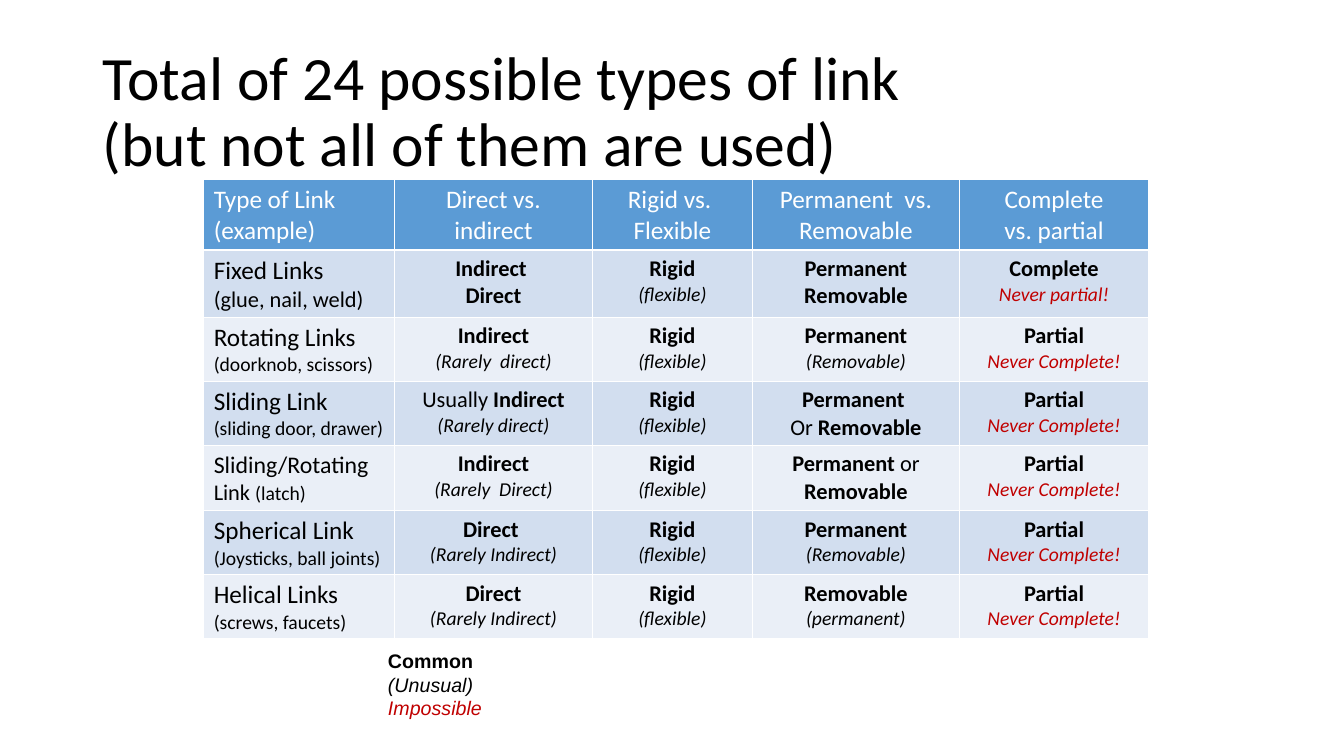
import pptx
import pptx.dml.color
import pptx.enum.text
import pptx.util

Inches = pptx.util.Inches
ALIGN = pptx.enum.text.PP_ALIGN

COLORS = {
    "black": "000000",
    "white": "FFFFFF",
    "impossible": "C00000",
    "header": "5B9BD5",
    "odd_row": "D2DEEF",
    "even_row": "EAEFF7",
}

# style: size, bold, italic, colour
STYLES = {
    "title": (44, False, False, "black"),
    "header": (18, False, False, "white"),
    "link": (18, False, False, "black"),
    "long_link": (17, False, False, "black"),
    "plain": (16, False, False, "black"),
    "example": (14, False, False, "black"),
    "common": (16, True, False, "black"),
    "common_key": (14, True, False, "black"),
    "unusual": (14, False, True, "black"),
    "impossible": (14, False, True, "impossible"),
}

COLUMN_WIDTHS = [1.89, 1.97, 1.58, 2.06, 1.87]
ROW_HEIGHTS = [0.7, 0.67, 0.63, 0.63, 0.65, 0.63, 0.63]
HEADINGS = [
    ["Type of Link", "(example)"],
    ["Direct vs.", "indirect"],
    ["Rigid vs. ", "Flexible"],
    ["Permanent  vs. Removable"],
    ["Complete", "vs. partial"],
]


def lines(*pairs):
    """Return one single-run line for each (text, style) pair."""
    return [[pair] for pair in pairs]


def usual(common, unusual):
    """Return a common option above an unusual one."""
    return lines((common, "common"), (unusual, "unusual"))


def link(name, example, style="example"):
    """Return a link type above its example."""
    return lines((name, "link"), (example, style))


RIGIDITY = usual("Rigid", "(flexible)")
PARTIAL = lines(("Partial", "common"), ("Never Complete!", "impossible"))

LINKS = [
    [link("Fixed Links", "(glue, nail, weld)", "plain"),
     lines(("Indirect ", "common"), ("Direct", "common")),
     RIGIDITY,
     lines(("Permanent", "common"), ("Removable", "common")),
     lines(("Complete", "common"), ("Never partial!", "impossible"))],
    [link("Rotating Links", "(doorknob, scissors)"),
     usual("Indirect", "(Rarely  direct)"),
     RIGIDITY, usual("Permanent", "(Removable)"), PARTIAL],
    [link("Sliding Link", "(sliding door, drawer)"),
     [[("Usually", "plain"), (" Indirect", "common")],
      [("(Rarely direct)", "unusual")]],
     RIGIDITY,
     [[("Permanent ", "common")],
      [("Or ", "plain"), ("Removable", "common")]],
     PARTIAL],
    [[[("Sliding/Rotating", "long_link"), (" Link ", "plain"), ("(latch)", "example")]],
     usual("Indirect", "(Rarely  Direct)"),
     RIGIDITY,
     [[("Permanent ", "common"), ("or", "plain")],
      [("Removable", "common")]],
     PARTIAL],
    [link("Spherical Link", "(Joysticks, ball joints)"),
     usual("Direct ", "(Rarely Indirect)"),
     RIGIDITY, usual("Permanent", "(Removable)"), PARTIAL],
    [link("Helical Links", "(screws, faucets)"),
     usual("Direct", "(Rarely Indirect)"),
     RIGIDITY, usual("Removable", "(permanent)"), PARTIAL],
]


def rgb(name):
    """Return the named colour."""
    return pptx.dml.color.RGBColor.from_string(COLORS[name])


def format_run(run, style, font_name):
    """Apply a named style to a run."""
    size, bold, italic, color = STYLES[style]
    run.font.name = font_name
    run.font.size = pptx.util.Pt(size)
    run.font.bold = bold
    run.font.italic = italic
    run.font.color.rgb = rgb(color)


def write(frame, content, font_name="Calibri", align=ALIGN.LEFT):
    """Fill a text frame with lines of styled runs."""
    frame.word_wrap = True
    frame.text = "\n".join("" for _ in content)
    for paragraph, line in zip(frame.paragraphs, content):
        paragraph.alignment = align
        for text, style in line:
            run = paragraph.add_run()
            run.text = text
            format_run(run, style, font_name)


def add_title(slide, left, top, width, height):
    """Place the two-line title in its box."""
    title = slide.shapes.add_textbox(*map(Inches, (left, top, width, height)))
    frame = title.text_frame
    frame.word_wrap = True
    frame.vertical_anchor = pptx.enum.text.MSO_ANCHOR.MIDDLE
    heading = frame.paragraphs[0]
    heading.text = "Total of 24 possible types of link\v(but not all of them are used)"
    heading.line_spacing = 0.9
    for run in heading.runs:
        format_run(run, "title", "Calibri")


def add_link_table(slide, left, top):
    """Place the table of link types with its top left corner at the given point."""
    headings = [lines(*((text, "header") for text in texts)) for texts in HEADINGS]
    rows = [headings] + LINKS
    table = slide.shapes.add_table(
        len(rows), len(COLUMN_WIDTHS), Inches(left), Inches(top),
        Inches(sum(COLUMN_WIDTHS)), Inches(sum(ROW_HEIGHTS))).table
    for column, width in zip(table.columns, COLUMN_WIDTHS):
        column.width = Inches(width)
    for r, (row, height) in enumerate(zip(rows, ROW_HEIGHTS)):
        table.rows[r].height = Inches(height)
        band = "header" if r == 0 else "odd_row" if r % 2 else "even_row"
        for c, content in enumerate(row):
            cell = table.cell(r, c)
            cell.fill.solid()
            cell.fill.fore_color.rgb = rgb(band)
            write(cell.text_frame, content, align=ALIGN.CENTER if c else ALIGN.LEFT)


def add_key(slide, left, top, width, height):
    """Place the key to the text styles in its box."""
    key = slide.shapes.add_textbox(*map(Inches, (left, top, width, height)))
    write(key.text_frame, lines(("Common", "common_key"), ("(Unusual)", "unusual"),
                                ("Impossible", "impossible")), "Arial")


def main():
    """Build the slide and save it."""
    deck = pptx.Presentation()
    deck.slide_width, deck.slide_height = Inches(13.33), Inches(7.5)
    slide = deck.slides.add_slide(deck.slide_layouts[6])
    add_title(slide, 0.92, 0.4, 11.5, 1.45)
    add_link_table(slide, 2.02, 1.78)
    add_key(slide, 3.75, 6.39, 1.14, 1.11)
    deck.save("out.pptx")


if __name__ == "__main__":
    main()
